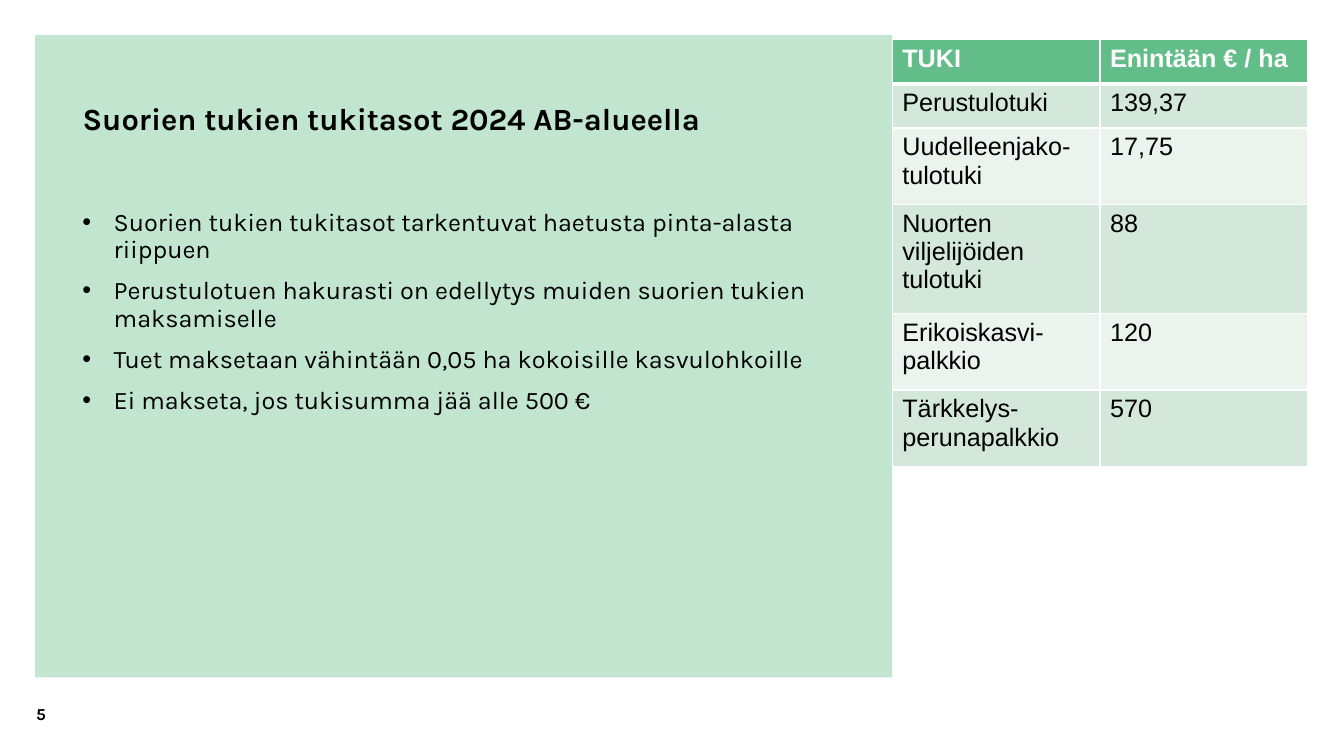
from lxml import etree
from pptx import Presentation
from pptx.dml.color import RGBColor
from pptx.enum.shapes import MSO_SHAPE
from pptx.enum.text import MSO_ANCHOR, MSO_AUTO_SIZE, PP_ALIGN
from pptx.oxml.ns import qn
from pptx.util import Inches, Pt

RECT = MSO_SHAPE.RECTANGLE
MIDDLE, TOP = MSO_ANCHOR.MIDDLE, MSO_ANCHOR.TOP
NO_FIT = MSO_AUTO_SIZE.NONE
LEFT = PP_ALIGN.LEFT
TITLE_ONLY = 5

COLORS = {
    "text": "000000",
    "white": "FFFFFF",
    "panel": "C1E5CF",
    "header": "63BD88",
    "band_dark": "D3E8DA",
    "band_light": "EAF4ED",
}

BULLETS = [
    "Suorien tukien tukitasot tarkentuvat haetusta pinta-alasta riippuen",
    "Perustulotuen hakurasti on edellytys muiden suorien tukien maksamiselle",
    "Tuet maksetaan vähintään 0,05 ha kokoisille kasvulohkoille",
    "Ei makseta, jos tukisumma jää alle 500 €",
]

SUPPORT_ROWS = [
    ("TUKI", "Enintään € / ha"),
    ("Perustulotuki", "139,37"),
    ("Uudelleenjako-tulotuki", "17,75"),
    ("Nuorten viljelijöiden tulotuki", "88"),
    ("Erikoiskasvi-palkkio", "120"),
    ("Tärkkelys-perunapalkkio", "570"),
]
ROW_HEIGHTS = [0.44, 0.44, 0.76, 1.08, 0.76, 0.76]


def rgb(name):
    return RGBColor.from_string(COLORS[name])


def write_text(tf, lines, size=18, font="Karla", color="text", bold=False,
               spacing=None, before=0, bullet=False, anchor=TOP):
    tf.word_wrap = True
    tf.auto_size = NO_FIT
    tf.vertical_anchor = anchor
    for i, line in enumerate(lines):
        p = tf.paragraphs[0] if i == 0 else tf.add_paragraph()
        p.alignment = LEFT
        if spacing:
            p.line_spacing = spacing
        p.space_before = Pt(before if i else 0)
        if bullet:
            add_bullet(p)
        r = p.add_run()
        r.text = line
        r.font.size = Pt(size)
        r.font.name = font
        r.font.bold = bold
        r.font.color.rgb = rgb(color)


def add_bullet(p, indent=0.31):
    pPr = p._p.get_or_add_pPr()
    pPr.set("marL", str(Inches(indent)))
    pPr.set("indent", str(-Inches(indent)))
    etree.SubElement(pPr, qn("a:buFont")).set("typeface", "Arial")
    etree.SubElement(pPr, qn("a:buChar")).set("char", "•")


def add_text(slide, box, lines, **fmt):
    sp = slide.shapes.add_textbox(*map(Inches, box))
    write_text(sp.text_frame, lines, **fmt)


def add_panel(slide, box, color):
    sp = slide.shapes.add_shape(RECT, *map(Inches, box))
    sp.shadow.inherit = False
    sp.fill.solid()
    sp.fill.fore_color.rgb = rgb(color)
    sp.line.fill.background()


def set_title(slide, box, text, **fmt):
    title = slide.shapes.title
    title.left, title.top, title.width, title.height = map(Inches, box)
    write_text(title.text_frame, [text], **fmt)
    # Bring the title in front of the panel
    title.element.getparent().append(title.element)


def set_borders(cell, top=1, bottom=1):
    tcPr = cell._tc.get_or_add_tcPr()
    for side, width in (("L", 1), ("R", 1), ("T", top), ("B", bottom)):
        ln = etree.SubElement(tcPr, qn(f"a:ln{side}"), w=str(Pt(width)))
        fill = etree.SubElement(ln, qn("a:solidFill"))
        etree.SubElement(fill, qn("a:srgbClr"), val=COLORS["white"])


def add_support_table(slide, box):
    rows, cols = len(SUPPORT_ROWS), len(SUPPORT_ROWS[0])
    table = slide.shapes.add_table(rows, cols, *map(Inches, box)).table
    for col in table.columns:
        col.width = Inches(box[2] / cols)
    for i, values in enumerate(SUPPORT_ROWS):
        table.rows[i].height = Inches(ROW_HEIGHTS[i])
        header = i == 0
        band = "header" if header else "band_dark" if i % 2 else "band_light"
        for j, value in enumerate(values):
            cell = table.cell(i, j)
            set_borders(cell, top=3 if i == 1 else 1, bottom=3 if header else 1)
            cell.fill.solid()
            cell.fill.fore_color.rgb = rgb(band)
            write_text(cell.text_frame, [value], font="Arial", bold=header,
                       color="white" if header else "text")


def main():
    prs = Presentation()
    prs.slide_width, prs.slide_height = Inches(13.33), Inches(7.5)
    slide = prs.slides.add_slide(prs.slide_layouts[TITLE_ONLY])

    # Slide number and green panel
    add_text(slide, (0.26, 6.93, 0.87, 0.3), ["5"], size=12, bold=True)
    add_panel(slide, (0.35, 0.35, 8.5, 6.37), "panel")

    # Title and bullets on the panel
    set_title(slide, (0.72, 0.77, 7.7, 0.86),
              "Suorien tukien tukitasot 2024 AB-alueella",
              size=22, bold=True, spacing=0.9, anchor=MIDDLE)
    add_text(slide, (0.72, 2.03, 7.7, 4.17), BULLETS,
             spacing=0.9, before=10, bullet=True)

    # Support levels
    add_support_table(slide, (8.85, 0.39, 4.12, sum(ROW_HEIGHTS)))

    prs.save("out.pptx")


if __name__ == "__main__":
    main()
